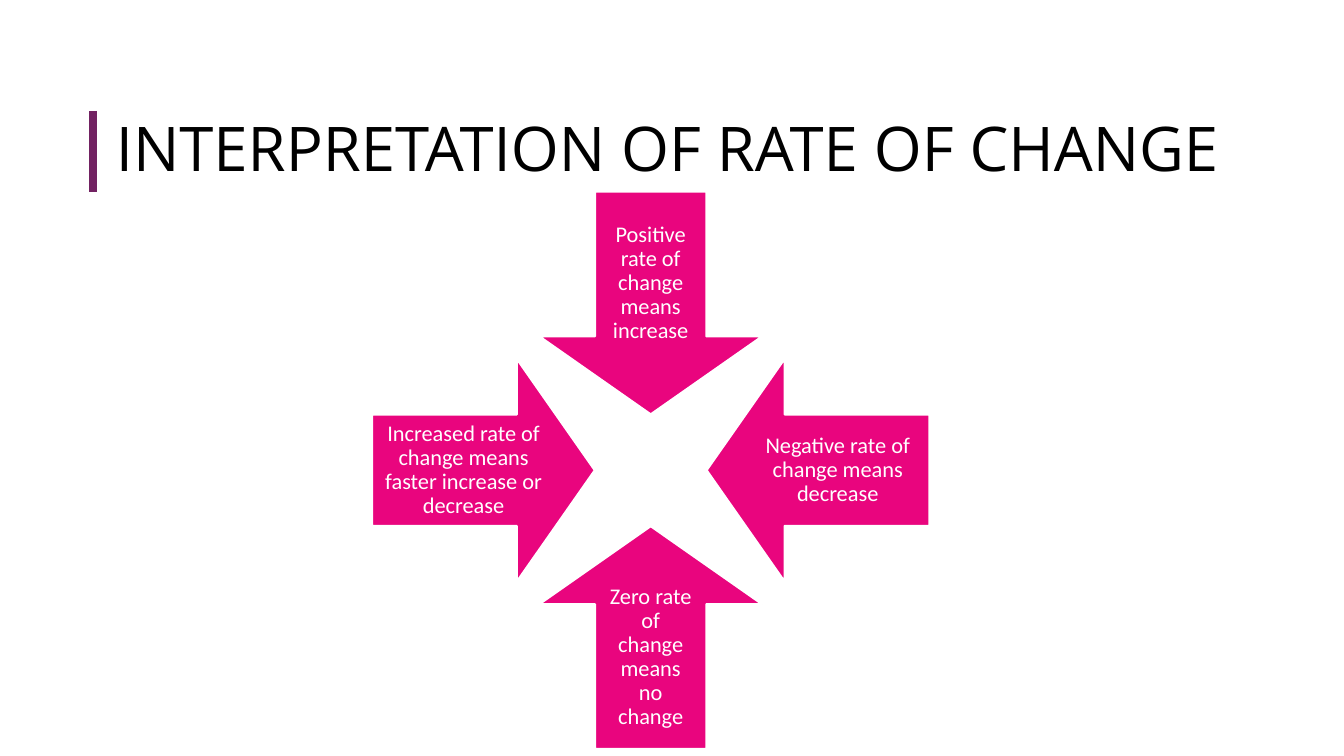
from lxml import etree
from pptx import Presentation
from pptx.dml.color import RGBColor
from pptx.enum import shapes, text
from pptx.oxml import ns
from pptx.util import Pt

BLACK = RGBColor(0x00, 0x00, 0x00)
WHITE = RGBColor(0xFF, 0xFF, 0xFF)
PINK = RGBColor(0xE9, 0x05, 0x7E)
PURPLE = RGBColor(0x72, 0x22, 0x62)


def place(shape, center_x, center_y, width, height):
    shape.left, shape.top = Pt(center_x - width / 2), Pt(center_y - height / 2)
    shape.width, shape.height = Pt(width), Pt(height)


def write(box, wording, frame_format, para_format, font_format, color):
    """Fill a box with one formatted paragraph."""
    frame = box.text_frame
    para = frame.paragraphs[0]
    span = para.add_run()
    span.text = wording
    for target, values in ((frame, frame_format), (para, para_format),
                           (span.font, font_format)):
        for name, value in values.items():
            setattr(target, name, value)
    span.font.color.rgb = color


deck = Presentation()
deck.slide_width, deck.slide_height = Pt(960), Pt(540)
page = deck.slides.add_slide(deck.slide_layouts[5])

# Title with its accent bar
bar = page.shapes.add_connector(
    shapes.MSO_CONNECTOR.STRAIGHT, Pt(66.4), Pt(79.2), Pt(66.4), Pt(136.8))
bar.line.color.rgb = PURPLE
bar.line.width = Pt(6)
etree.SubElement(bar._element.spPr, ns.qn("a:effectLst"))

title = page.shapes.title
place(title, 489.6, 108, 828, 57.6)
write(title, "INTERPRETATION OF RATE OF CHANGE",
      {"vertical_anchor": text.MSO_ANCHOR.MIDDLE, "word_wrap": True,
       "auto_size": text.MSO_AUTO_SIZE.NONE},
      {"alignment": text.PP_ALIGN.LEFT, "line_spacing": 0.9},
      {"name": "Open Sans", "size": Pt(44)}, BLACK)

# Four arrows pointing at a shared centre, clockwise from the top
CENTER_X, CENTER_Y = 464.8, 335.9
ARROW_SIZE, ARROW_OFFSET = 159.1, 119.5
LABEL_LONG, LABEL_SHORT, LABEL_OFFSET = 131, 79.2, 133.6
INSET = Pt(8.6)
LABEL_FRAME = {"vertical_anchor": text.MSO_ANCHOR.MIDDLE, "word_wrap": True,
               "margin_left": INSET, "margin_right": INSET,
               "margin_top": INSET, "margin_bottom": INSET}
LABEL_PARA = {"alignment": text.PP_ALIGN.CENTER, "line_spacing": 0.9}
LABEL_FONT = {"name": "Calibri", "size": Pt(16)}

ARROWS = [
    (0, -1, "Positive rate of change means increase"),
    (1, 0, "Negative rate of change means decrease"),
    (0, 1, "Zero rate of change means no change"),
    (-1, 0, "Increased rate of change means faster increase or decrease"),
]
for index, (step_x, step_y, wording) in enumerate(ARROWS):
    arrow = page.shapes.add_shape(shapes.MSO_SHAPE.DOWN_ARROW, 0, 0, 0, 0)
    place(arrow, CENTER_X + step_x * ARROW_OFFSET,
          CENTER_Y + step_y * ARROW_OFFSET, ARROW_SIZE, ARROW_SIZE)
    arrow.rotation = 90 * index
    arrow.adjustments[0], arrow.adjustments[1] = 0.5, 0.35
    arrow.shadow.inherit = False
    arrow.fill.solid()
    arrow.fill.fore_color.rgb = PINK
    arrow.line.color.rgb = WHITE
    arrow.line.width = Pt(1.5)

    label = page.shapes.add_textbox(0, 0, 0, 0)
    width, height = (LABEL_LONG, LABEL_SHORT) if step_x else (LABEL_SHORT, LABEL_LONG)
    place(label, CENTER_X + step_x * LABEL_OFFSET,
          CENTER_Y + step_y * LABEL_OFFSET, width, height)
    write(label, wording, LABEL_FRAME, LABEL_PARA, LABEL_FONT, WHITE)

deck.save("out.pptx")
